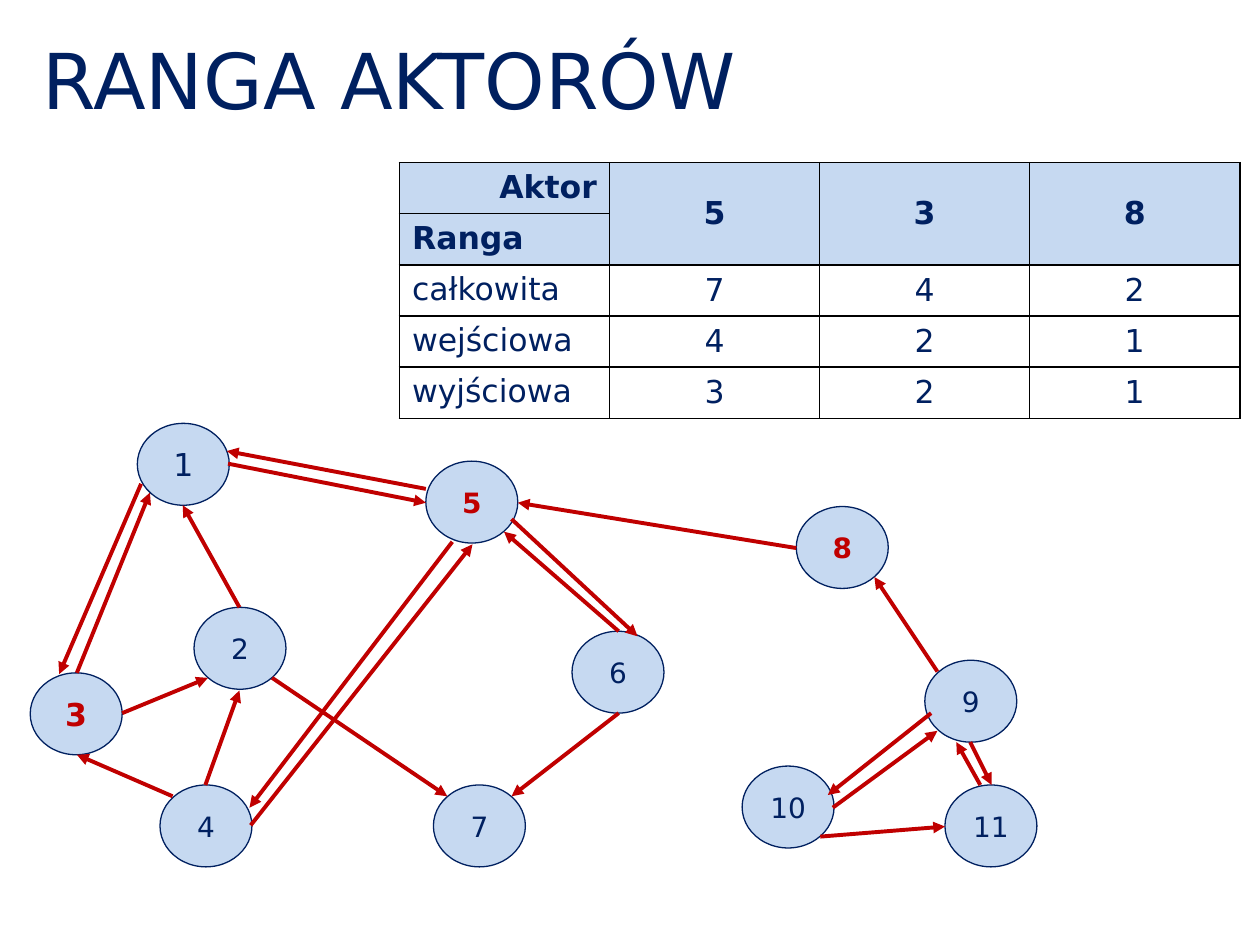
"""Build the actor rank slide: a rank table above a directed network."""
from dataclasses import dataclass

from lxml.etree import SubElement
from pptx import Presentation
from pptx.dml.color import RGBColor
from pptx.enum.shapes import MSO_CONNECTOR, MSO_SHAPE
from pptx.enum.text import MSO_ANCHOR, PP_ALIGN
from pptx.oxml import parse_xml
from pptx.oxml.ns import nsdecls, qn
from pptx.util import Inches, Pt


@dataclass(frozen=True)
class Theme:
    font: str = "DejaVu Sans"
    navy: RGBColor = RGBColor(0x00, 0x20, 0x60)
    red: RGBColor = RGBColor(0xC0, 0x00, 0x00)
    pale: RGBColor = RGBColor(0xC6, 0xD9, 0xF1)
    white: RGBColor = RGBColor(0xFF, 0xFF, 0xFF)
    border: str = "000000"
    title_size: int = 44
    large_size: int = 18
    node_size: int = 16


theme = Theme()


def write(tf, text, *, size, color=theme.navy, bold=False, align=PP_ALIGN.CENTER):
    p = tf.paragraphs[0]
    p.alignment = align
    r = p.add_run()
    r.text = text
    r.font.name = theme.font
    r.font.size = Pt(size)
    r.font.bold = bold
    r.font.color.rgb = color


def add_borders(cell):
    tc_pr = cell._tc.get_or_add_tcPr()
    for side in ("lnL", "lnR", "lnT", "lnB"):
        tc_pr.append(parse_xml(
            f'<a:{side} {nsdecls("a")} w="12700"><a:solidFill>'
            f'<a:srgbClr val="{theme.border}"/></a:solidFill></a:{side}>'))


prs = Presentation()
prs.slide_width, prs.slide_height = Inches(10), Inches(7.5)
s = prs.slides.add_slide(prs.slide_layouts[5])

title = s.shapes.title
title.left, title.top = Inches(0.24), Inches(0)
title.width, title.height = Inches(9), Inches(1.25)
title.text_frame.vertical_anchor = MSO_ANCHOR.MIDDLE
write(title.text_frame, "RANGA AKTORÓW", size=theme.title_size, align=PP_ALIGN.LEFT)

nodes = [
    ("1", 1.09, 3.36), ("2", 1.54, 4.82), ("8", 6.32, 4.02), ("3", 0.24, 5.34),
    ("5", 3.38, 3.66), ("9", 7.34, 5.24), ("11", 7.5, 6.23), ("10", 5.89, 6.08),
    ("6", 4.54, 5.01), ("7", 3.44, 6.23), ("4", 1.27, 6.23),
]
ranked = ("5", "3", "8")
for name, x, y in nodes:
    sp = s.shapes.add_shape(MSO_SHAPE.OVAL, Inches(x), Inches(y), Inches(0.73), Inches(0.65))
    sp.shadow.inherit = False
    sp.fill.solid()
    sp.fill.fore_color.rgb = theme.pale
    sp.line.color.rgb = theme.navy
    sp.line.width = Pt(0.75)
    tf = sp.text_frame
    tf.margin_left = tf.margin_right = Inches(0)
    tf.vertical_anchor = MSO_ANCHOR.MIDDLE
    write(tf, name, size=theme.large_size if name in ("1", "3") else theme.node_size,
          color=theme.red if name in ranked else theme.navy, bold=name in ranked)

arrows = [
    (1.9, 4.82, 1.45, 4.01), (1.81, 3.68, 3.38, 3.99), (0.61, 5.34, 1.19, 3.91),
    (0.97, 5.66, 1.65, 5.38), (1.63, 6.23, 1.9, 5.48), (1.37, 6.32, 0.61, 5.99),
    (2.16, 5.38, 3.55, 6.32), (1.99, 6.55, 3.75, 4.32), (4.91, 5.66, 4.06, 6.32),
    (4.91, 5.01, 4, 4.22), (6.32, 4.35, 4.11, 3.99), (7.44, 5.33, 6.94, 4.58),
    (7.7, 5.89, 7.87, 6.23), (6.61, 6.41, 7.44, 5.8), (6.51, 6.64, 7.5, 6.56),
    (3.38, 3.88, 1.8, 3.58), (4.06, 4.12, 5.06, 5.05), (7.39, 5.66, 6.57, 6.31),
    (7.78, 6.23, 7.59, 5.89), (3.59, 4.3, 1.98, 6.41), (1.12, 3.84, 0.47, 5.35),
]
for ends in arrows:
    arrow = s.shapes.add_connector(MSO_CONNECTOR.STRAIGHT, *map(Inches, ends))
    arrow.line.color.rgb = theme.red
    arrow.line.width = Pt(2.25)
    SubElement(arrow.line._get_or_add_ln(), qn("a:tailEnd"), type="triangle")
    SubElement(arrow._element.spPr, qn("a:effectLst"))

rows = [
    ("Aktor", *ranked),
    ("Ranga", "", "", ""),
    ("całkowita", "7", "4", "2"),
    ("wejściowa", "4", "2", "1"),
    ("wyjściowa", "3", "2", "1"),
]
table = s.shapes.add_table(5, 4, Inches(3.17), Inches(1.29), Inches(6.67), Inches(2.03)).table
table.first_row = table.horz_banding = False
for col in range(1, 4):
    table.cell(0, col).merge(table.cell(1, col))
for i, row in enumerate(rows):
    for j, text in enumerate(row):
        cell = table.cell(i, j)
        add_borders(cell)
        cell.fill.solid()
        cell.fill.fore_color.rgb = theme.pale if i < 2 else theme.white
        cell.vertical_anchor = MSO_ANCHOR.MIDDLE if j else MSO_ANCHOR.TOP
        if text:
            align = PP_ALIGN.CENTER if j else PP_ALIGN.LEFT if i else PP_ALIGN.RIGHT
            write(cell.text_frame, text, size=theme.large_size, bold=i < 2, align=align)

prs.save("out.pptx")
